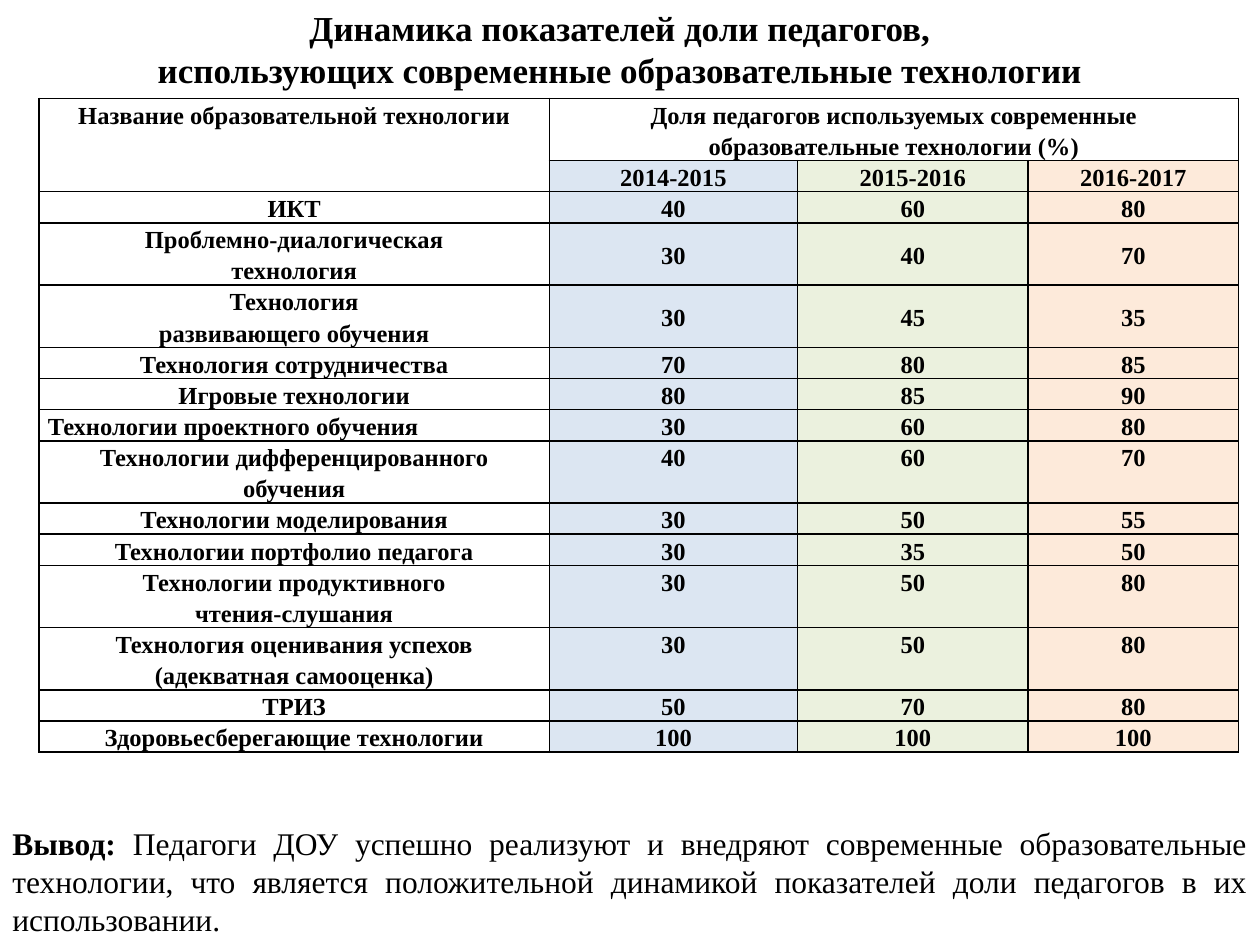
from lxml.etree import SubElement as Sub
from pptx import Presentation
from pptx.dml.color import RGBColor
from pptx.enum.text import MSO_ANCHOR as Anchor, PP_ALIGN as Align
from pptx.oxml.ns import qn
from pptx.util import Inches, Pt

FONT = "Times New Roman"
BLACK = "000000"
YEARS = ["2014-2015", "2015-2016", "2016-2017"]
TINTS = ["DCE6F2", "EBF1DE", "FDEADA"]
WIDTHS = [4.05, 1.97, 1.83, 1.67]
LINE = 0.22
MIDDLE = 5  # the first rows have their values centred vertically

# Name, lines it takes, share per year
ROWS = [
    ("ИКТ", 1, 40, 60, 80),
    ("Проблемно-диалогическая\nтехнология", 2, 30, 40, 70),
    ("Технология\nразвивающего обучения", 2, 30, 45, 35),
    ("Технология сотрудничества", 1, 70, 80, 85),
    ("Игровые технологии", 1, 80, 85, 90),
    ("Технологии проектного обучения", 1, 30, 60, 80),
    ("Технологии дифференцированного обучения", 2, 40, 60, 70),
    ("Технологии моделирования", 1, 30, 50, 55),
    ("Технологии портфолио педагога", 1, 30, 35, 50),
    ("Технологии продуктивного\nчтения-слушания", 2, 30, 50, 80),
    ("Технология оценивания успехов (адекватная самооценка)", 2, 30, 50, 80),
    ("ТРИЗ", 1, 50, 70, 80),
    ("Здоровьесберегающие технологии", 1, 100, 100, 100),
]
LEFT_NAME = "Технологии проектного обучения"


def color(code):
    return RGBColor.from_string(code)


def style(font, size, bold=True):
    font.name, font.size, font.bold = FONT, Pt(size), bold
    font.color.rgb = color(BLACK)


def place(shape, left, top, width, height):
    shape.left, shape.top = Inches(left), Inches(top)
    shape.width, shape.height = Inches(width), Inches(height)


def border(cell):
    props = cell._tc.get_or_add_tcPr()
    for side in ("lnL", "lnR", "lnT", "lnB"):
        line = Sub(props, qn("a:" + side), w=str(Pt(1)))
        fill = Sub(line, qn("a:solidFill"))
        Sub(fill, qn("a:srgbClr"), val=BLACK)


def write(cell, text, align=Align.CENTER, anchor=Anchor.TOP):
    cell.text = text
    cell.vertical_anchor = anchor
    for par in cell.text_frame.paragraphs:
        par.alignment = align
        par.line_spacing = 1.15
        style(par.font, 14)


def add_title(slide):
    title = slide.shapes.title
    place(title, 0.31, 0, 9.22, 0.77)
    frame = title.text_frame
    frame.text = ("Динамика показателей доли педагогов,\n"
                  "использующих современные образовательные технологии")
    frame.vertical_anchor = Anchor.MIDDLE
    for par in frame.paragraphs:
        par.alignment = Align.CENTER
        style(par.font, 20)


def add_grid(slide):
    heights = [0.36, 0.18] + [LINE * row[1] for row in ROWS]
    table = slide.shapes.add_table(
        len(heights), len(WIDTHS), Inches(0.31), Inches(0.78),
        Inches(sum(WIDTHS)), Inches(sum(heights))).table
    table.first_row = table.horz_banding = False
    for col, width in zip(table.columns, WIDTHS):
        col.width = Inches(width)
    for row, height in zip(table.rows, heights):
        row.height = Inches(height)

    # Borders, margins and column tints
    for r in range(len(heights)):
        for c in range(len(WIDTHS)):
            cell = table.cell(r, c)
            border(cell)
            cell.margin_left = cell.margin_right = Inches(0.07)
            cell.margin_top = cell.margin_bottom = 0
            if r and c:
                cell.fill.solid()
                cell.fill.fore_color.rgb = color(TINTS[c - 1])
            else:
                cell.fill.background()

    # Header
    table.cell(0, 0).merge(table.cell(1, 0))
    table.cell(0, 1).merge(table.cell(0, 3))
    write(table.cell(0, 0), "Название образовательной технологии")
    write(table.cell(0, 1), "Доля педагогов используемых современные\n"
                            "образовательные технологии (%)")
    for c, year in enumerate(YEARS, 1):
        write(table.cell(1, c), year)

    # Technologies and their shares
    for i, (name, _, *shares) in enumerate(ROWS):
        align = Align.LEFT if name == LEFT_NAME else Align.CENTER
        write(table.cell(i + 2, 0), name, align)
        # the project row still belongs to the centred group
        anchor = Anchor.MIDDLE if i <= MIDDLE else Anchor.TOP
        for c, share in enumerate(shares, 1):
            write(table.cell(i + 2, c), str(share), anchor=anchor)


def add_note(slide):
    box = slide.shapes.add_textbox(
        Inches(0), Inches(6.49), Inches(10), Inches(1.01))
    frame = box.text_frame
    frame.word_wrap = True
    par = frame.paragraphs[0]
    par.alignment = Align.JUSTIFY
    parts = [
        ("Вывод:", True),
        (" Педагоги ДОУ успешно реализуют и внедряют современные "
         "образовательные технологии, что является положительной динамикой "
         "показателей доли педагогов в их использовании.", False),
    ]
    for text, bold in parts:
        run = par.add_run()
        run.text = text
        style(run.font, 18, bold)


def main():
    deck = Presentation()
    deck.slide_width, deck.slide_height = Inches(10), Inches(7.5)
    slide = deck.slides.add_slide(deck.slide_layouts[5])
    add_grid(slide)
    add_title(slide)
    add_note(slide)
    deck.save("out.pptx")


if __name__ == "__main__":
    main()
